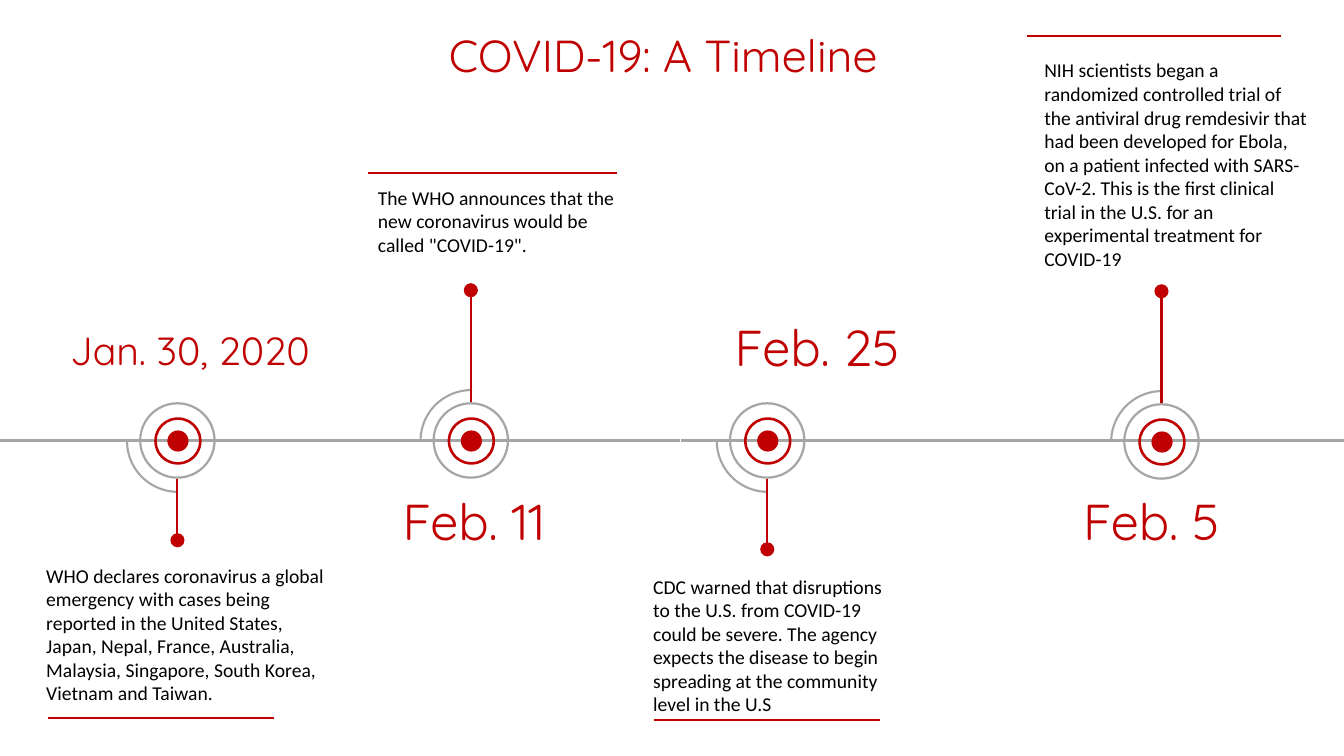
from dataclasses import dataclass

import pptx
import pptx.dml.color
import pptx.enum.shapes
import pptx.enum.text
import pptx.oxml.ns
import pptx.util
from lxml import etree

EMU_PER_PX = 9144
RED = "C00000"
GREY = "A6A6A6"
BLACK = "000000"
LINE_WIDTH = 1.5
AXIS_Y = 437
AXIS_SEGMENTS = [(0, 168), (181, 428), (428, 674), (675, 922), (920, 1166), (1166, 1333)]
ARC_SIZE = 101
RING_SIZE = 76
END_DOT_SIZE = 14
SHAPES = pptx.enum.shapes.MSO_SHAPE


@dataclass(frozen=True)
class Box:
    left: int
    top: int
    width: int
    height: int


@dataclass(frozen=True)
class Layer:
    kind: int
    size: int
    color: str
    adjustment: float | None = None


@dataclass(frozen=True)
class Rule:
    left: int
    right: int
    y: int


@dataclass(frozen=True)
class Event:
    x: int
    y: int
    dot_y: int
    date: str
    date_size: int
    date_box: Box
    caption: str
    caption_box: Box
    rule: Rule


MARKER_LAYERS = [
    Layer(SHAPES.OVAL, 21, RED),
    Layer(SHAPES.DONUT, 47, RED, 0.053),
    Layer(SHAPES.DONUT, RING_SIZE, GREY, 0.029),
]

EVENTS = [
    Event(176, AXIS_Y, 536, "Jan. 30, 2020", 28, Box(21, 319, 335, 57),
          "WHO declares coronavirus a global emergency with cases being reported in the "
          "United States, Japan, Nepal, France, Australia, Malaysia, Singapore, South Korea, "
          "Vietnam and Taiwan.",
          Box(36, 554, 302, 151), Rule(48, 272, 712)),
    Event(467, AXIS_Y, 288, "Feb. 11", 36, Box(361, 481, 218, 71),
          "The WHO announces that the new coronavirus would be called \"COVID-19\".",
          Box(365, 179, 257, 81), Rule(365, 612, 172)),
    Event(761, AXIS_Y, 545, "Feb. 25", 36, Box(705, 309, 211, 71),
          "CDC warned that disruptions to the U.S. from COVID-19 could be severe. The agency "
          "expects the disease to begin spreading at the community level in the U.S",
          Box(638, 565, 261, 151), Rule(649, 873, 714)),
    Event(1152, AXIS_Y + 1, 289, "Feb. 5", 36, Box(1047, 481, 190, 71),
          "NIH scientists began a randomized controlled trial of the antiviral drug remdesivir "
          "that had been developed for Ebola, on a patient infected with SARS-CoV-2. This is the "
          "first clinical trial in the U.S. for an experimental treatment for COVID-19",
          Box(1026, 53, 284, 222), Rule(1019, 1271, 36)),
]


def px(length: int) -> pptx.util.Emu:
    return pptx.util.Emu(length * EMU_PER_PX)


def rgb(color: str) -> pptx.dml.color.RGBColor:
    return pptx.dml.color.RGBColor.from_string(color)


def centred_box(x: int, y: int, size: int) -> Box:
    return Box(x - size // 2, y - size // 2, size, size)


def add_line(slide, start: tuple[int, int], end: tuple[int, int], color: str) -> None:
    connector = slide.shapes.add_connector(
        pptx.enum.shapes.MSO_CONNECTOR.STRAIGHT, *map(px, (*start, *end)))
    connector.line.color.rgb = rgb(color)
    connector.line.width = pptx.util.Pt(LINE_WIDTH)
    properties = connector._element.spPr
    etree.SubElement(properties, pptx.oxml.ns.qn("a:effectLst"))


def add_shape(slide, kind: int, box: Box):
    shape = slide.shapes.add_shape(
        kind, px(box.left), px(box.top), px(box.width), px(box.height))
    shape.shadow.inherit = False
    return shape


def add_layer(slide, layer: Layer, x: int, y: int) -> None:
    shape = add_shape(slide, layer.kind, centred_box(x, y, layer.size))
    shape.fill.solid()
    shape.fill.fore_color.rgb = rgb(layer.color)
    shape.line.fill.background()
    if layer.adjustment is not None:
        shape.adjustments[0] = layer.adjustment


def add_arc(slide, x: int, y: int, rotation: int) -> None:
    shape = add_shape(slide, SHAPES.ARC, centred_box(x, y, ARC_SIZE))
    shape.adjustments[0] = 54.204
    shape.adjustments[1] = 108.533
    shape.rotation = rotation
    shape.fill.background()
    shape.line.color.rgb = rgb(GREY)
    shape.line.width = pptx.util.Pt(LINE_WIDTH)


def add_text(slide, text: str, box: Box, *, size: int, font: str = "Quicksand",
             color: str = RED, centred: bool = True) -> None:
    shape = slide.shapes.add_textbox(
        px(box.left), px(box.top), px(box.width), px(box.height))
    frame = shape.text_frame
    frame.word_wrap = True
    frame.auto_size = pptx.enum.text.MSO_AUTO_SIZE.SHAPE_TO_FIT_TEXT
    paragraph = frame.paragraphs[0]
    alignment = pptx.enum.text.PP_ALIGN
    paragraph.alignment = alignment.CENTER if centred else alignment.LEFT
    run = paragraph.add_run()
    run.text = text
    run.font.size = pptx.util.Pt(size)
    run.font.name = font
    run.font.color.rgb = rgb(color)


def add_event(slide, event: Event) -> None:
    points_up = event.dot_y < event.y
    direction = -1 if points_up else 1
    add_arc(slide, event.x, event.y, 90 if points_up else 0)
    for layer in MARKER_LAYERS:
        add_layer(slide, layer, event.x, event.y)
    stem_start = event.y + direction * RING_SIZE // 2
    add_line(slide, (event.x, stem_start), (event.x, event.dot_y), RED)
    add_layer(slide, Layer(SHAPES.OVAL, END_DOT_SIZE, RED), event.x, event.dot_y)
    add_text(slide, event.date, event.date_box, size=event.date_size)
    add_text(slide, event.caption, event.caption_box,
             size=14, font="Calibri", color=BLACK, centred=False)
    add_line(slide, (event.rule.left, event.rule.y), (event.rule.right, event.rule.y), RED)


def main() -> None:
    presentation = pptx.Presentation()
    presentation.slide_width = px(1333)
    presentation.slide_height = px(750)
    slide = presentation.slides.add_slide(presentation.slide_layouts[6])
    for left, right in AXIS_SEGMENTS:
        add_line(slide, (left, AXIS_Y), (right, AXIS_Y), GREY)
    for event in EVENTS:
        add_event(slide, event)
    add_text(slide, "COVID-19: A Timeline", Box(260, 23, 796, 64), size=32)
    presentation.save("out.pptx")


if __name__ == "__main__":
    main()
